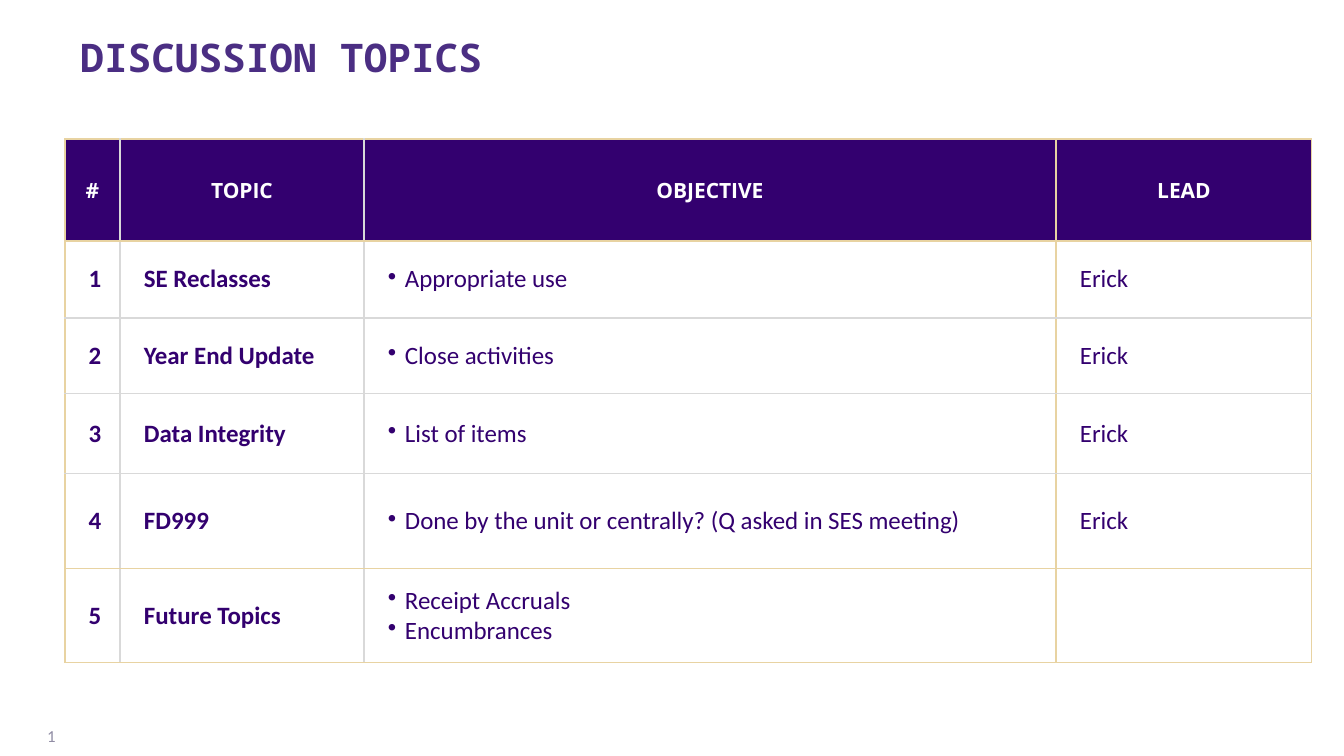
"""Build the discussion topics slide with its agenda table."""
from itertools import product

from pptx import Presentation
from pptx.dml.color import RGBColor
from pptx.enum.text import MSO_ANCHOR, MSO_AUTO_SIZE, PP_ALIGN
from pptx.oxml import parse_xml
from pptx.oxml.ns import nsdecls
from pptx.util import Pt

PX = 9676
COLORS = {"title": "4B2E83", "purple": "33006F", "white": "FFFFFF",
          "number": "908CA4", "gold": "E8D3A2", "gray": "D9D9D9"}
TITLE = "DISCUSSION TOPICS"
HEADERS = ["#", "TOPIC", "OBJECTIVE", "LEAD"]
TOPICS = [
    ("SE Reclasses", ["Appropriate use"], "Erick"),
    ("Year End Update", ["Close activities"], "Erick"),
    ("Data Integrity", ["List of items"], "Erick"),
    ("FD999", ["Done by the unit or centrally? (Q asked in SES meeting)"], "Erick"),
    ("Future Topics", ["Receipt Accruals", "Encumbrances"], ""),
]
COLUMN_WIDTHS = [55, 244, 692, 256]
ROW_HEIGHTS = [102, 77, 76, 80, 95, 94]
TABLE_LEFT, TABLE_TOP = 65, 139
OBJECTIVE_COLUMN = 2
GRAY_BELOW_ROWS = (1, 2, 3)
GRAY_RIGHT_OF_COLUMNS = (0, 1)


def rgb(name):
    return RGBColor.from_string(COLORS[name])


def set_font(paragraph, name, size, color, bold=False):
    font = paragraph.font
    font.name, font.size, font.bold = name, Pt(size), bold
    font.color.rgb = rgb(color)


def set_indent(paragraph, left, hanging=0, bullet=None):
    properties = paragraph._p.get_or_add_pPr()
    properties.set("marL", str(left * PX))
    properties.set("indent", str(-hanging * PX))
    if bullet:
        properties.append(parse_xml(f'<a:buChar {nsdecls("a")} char="{bullet}"/>'))


def set_borders(cell, row, column):
    bottom = "gray" if row in GRAY_BELOW_ROWS else "gold"
    top = "gray" if row - 1 in GRAY_BELOW_ROWS else "gold"
    right = "gray" if column in GRAY_RIGHT_OF_COLUMNS else "gold"
    left = "gray" if column - 1 in GRAY_RIGHT_OF_COLUMNS else "gold"
    sides = [("lnL", left), ("lnR", right), ("lnT", top), ("lnB", bottom)]
    for index, (tag, color) in enumerate(sides):
        cell._tc.get_or_add_tcPr().insert(index, parse_xml(
            f'<a:{tag} {nsdecls("a")} w="{Pt(1)}"><a:solidFill>'
            f'<a:srgbClr val="{COLORS[color]}"/></a:solidFill></a:{tag}>'))


def fill_cell(cell, lines, row, column):
    header = row == 0
    cell.vertical_anchor = MSO_ANCHOR.MIDDLE
    cell.margin_left = 0 if header else 5 * PX
    cell.margin_right = cell.margin_top = cell.margin_bottom = 0
    if header:
        cell.fill.solid()
        cell.fill.fore_color.rgb = rgb("purple")
    else:
        cell.fill.background()
    set_borders(cell, row, column)
    cell.text = "\n".join(lines)
    for paragraph in cell.text_frame.paragraphs:
        if header or column == 0:
            paragraph.alignment = PP_ALIGN.CENTER
        elif column == OBJECTIVE_COLUMN:
            set_indent(paragraph, 36, 17, "•")
        else:
            set_indent(paragraph, 19)
        if header:
            set_font(paragraph, "Open Sans", 16, "white", True)
        else:
            set_font(paragraph, "Calibri", 19, "purple", column < OBJECTIVE_COLUMN)


def add_title(slide):
    title = slide.shapes.title
    title.left, title.top, title.width, title.height = (
        value * PX for value in (71, 34, 1177, 49))
    frame = title.text_frame
    frame.text = TITLE
    frame.auto_size = MSO_AUTO_SIZE.NONE
    frame.vertical_anchor = MSO_ANCHOR.TOP
    paragraph = frame.paragraphs[0]
    paragraph.alignment = PP_ALIGN.LEFT
    paragraph.line_spacing = 0.9
    set_font(paragraph, "Noto Sans Mono", 30, "title", True)


def add_agenda(slide):
    rows = [[[header] for header in HEADERS]]
    rows += [[[str(number)], [topic], objectives, [lead]]
             for number, (topic, objectives, lead) in enumerate(TOPICS, 1)]
    table = slide.shapes.add_table(
        len(rows), len(HEADERS), TABLE_LEFT * PX, TABLE_TOP * PX,
        sum(COLUMN_WIDTHS) * PX, sum(ROW_HEIGHTS) * PX).table
    table.first_row = table.horz_banding = False
    for column, width in zip(table.columns, COLUMN_WIDTHS):
        column.width = width * PX
    for row, height in zip(table.rows, ROW_HEIGHTS):
        row.height = height * PX
    for row, column in product(range(len(rows)), range(len(HEADERS))):
        fill_cell(table.cell(row, column), rows[row][column], row, column)


def add_slide_number(slide):
    box = slide.shapes.add_textbox(*(value * PX for value in (18, 715, 47, 41)))
    frame = box.text_frame
    frame.word_wrap = True
    frame.vertical_anchor = MSO_ANCHOR.MIDDLE
    frame.text = "1"
    paragraph = frame.paragraphs[0]
    paragraph.alignment = PP_ALIGN.RIGHT
    set_font(paragraph, "Calibri", 12.8, "number")


def main():
    presentation = Presentation()
    presentation.slide_width, presentation.slide_height = 1344 * PX, 756 * PX
    slide = presentation.slides.add_slide(presentation.slide_layouts[5])
    add_title(slide)
    add_agenda(slide)
    add_slide_number(slide)
    presentation.save("out.pptx")


if __name__ == "__main__":
    main()
